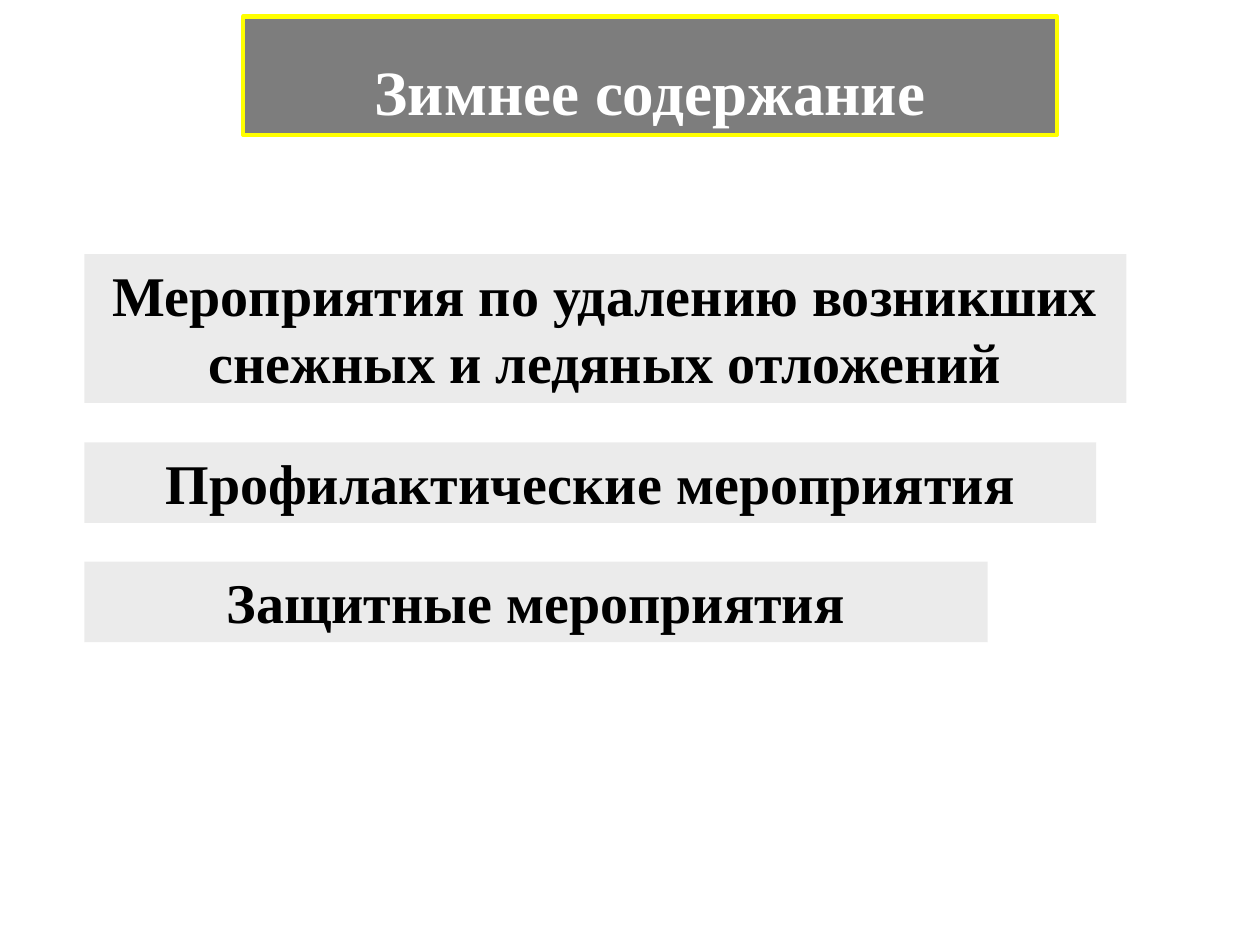
from lxml import etree
from pptx import Presentation
from pptx.dml.color import RGBColor
from pptx.enum.shapes import MSO_SHAPE
from pptx.enum.text import MSO_ANCHOR, MSO_AUTO_SIZE, PP_ALIGN
from pptx.oxml.ns import qn
from pptx.util import Pt

RECTANGLE = MSO_SHAPE.RECTANGLE
TOP, BOTTOM = MSO_ANCHOR.TOP, MSO_ANCHOR.BOTTOM
NO_FIT, GROW = MSO_AUTO_SIZE.NONE, MSO_AUTO_SIZE.SHAPE_TO_FIT_TEXT
CENTER = PP_ALIGN.CENTER

BLACK = RGBColor(0x00, 0x00, 0x00)
WHITE = RGBColor(0xFF, 0xFF, 0xFF)
YELLOW = RGBColor(0xFF, 0xFF, 0x00)
LIGHT_GRAY = RGBColor(0xD9, 0xD9, 0xD9)

FONT = "Times New Roman"
BAND_LEFT = 48.24
MEASURES = [
    ("Мероприятия по удалению возникших снежных и ледяных отложений", 145.2, 595.4, 85),
    ("Профилактические мероприятия", 252.8, 578.2, 46),
    ("Защитные мероприятия", 321, 516.2, 46),
]


def fill_translucent(shape, color, opacity):
    shape.fill.solid()
    shape.fill.fore_color.rgb = color
    color_element = shape._element.spPr.find(qn("a:solidFill"))[0]
    etree.SubElement(color_element, qn("a:alpha"), val=str(opacity * 1000))


def write_text(shape, text, size, color, anchor, fit):
    frame = shape.text_frame
    frame.text = text
    frame.word_wrap = True
    frame.auto_size = fit
    frame.vertical_anchor = anchor
    paragraph = frame.paragraphs[0]
    paragraph.alignment = CENTER
    font = paragraph.font
    font.name = FONT
    font.size = Pt(size)
    font.bold = True
    font.color.rgb = color


def add_title(slide, text):
    title = slide.shapes.title
    title.left, title.top = Pt(139), Pt(9.4)
    title.width, title.height = Pt(465), Pt(67.7)
    fill_translucent(title, BLACK, 51)
    title.line.color.rgb = YELLOW
    title.line.width = Pt(2.5)
    write_text(title, text, 36, WHITE, BOTTOM, NO_FIT)


def add_measure(slide, text, top, width, height):
    band = slide.shapes.add_shape(
        RECTANGLE, Pt(BAND_LEFT), Pt(top), Pt(width), Pt(height))
    band.shadow.inherit = False
    fill_translucent(band, LIGHT_GRAY, 50)
    band.line.fill.background()
    write_text(band, text, 32, BLACK, TOP, GROW)


def main():
    presentation = Presentation()
    presentation.slide_width, presentation.slide_height = Pt(720), Pt(540)
    slide = presentation.slides.add_slide(presentation.slide_layouts[5])
    add_title(slide, "Зимнее содержание")
    for measure in MEASURES:
        add_measure(slide, *measure)
    presentation.save("out.pptx")


if __name__ == "__main__":
    main()
